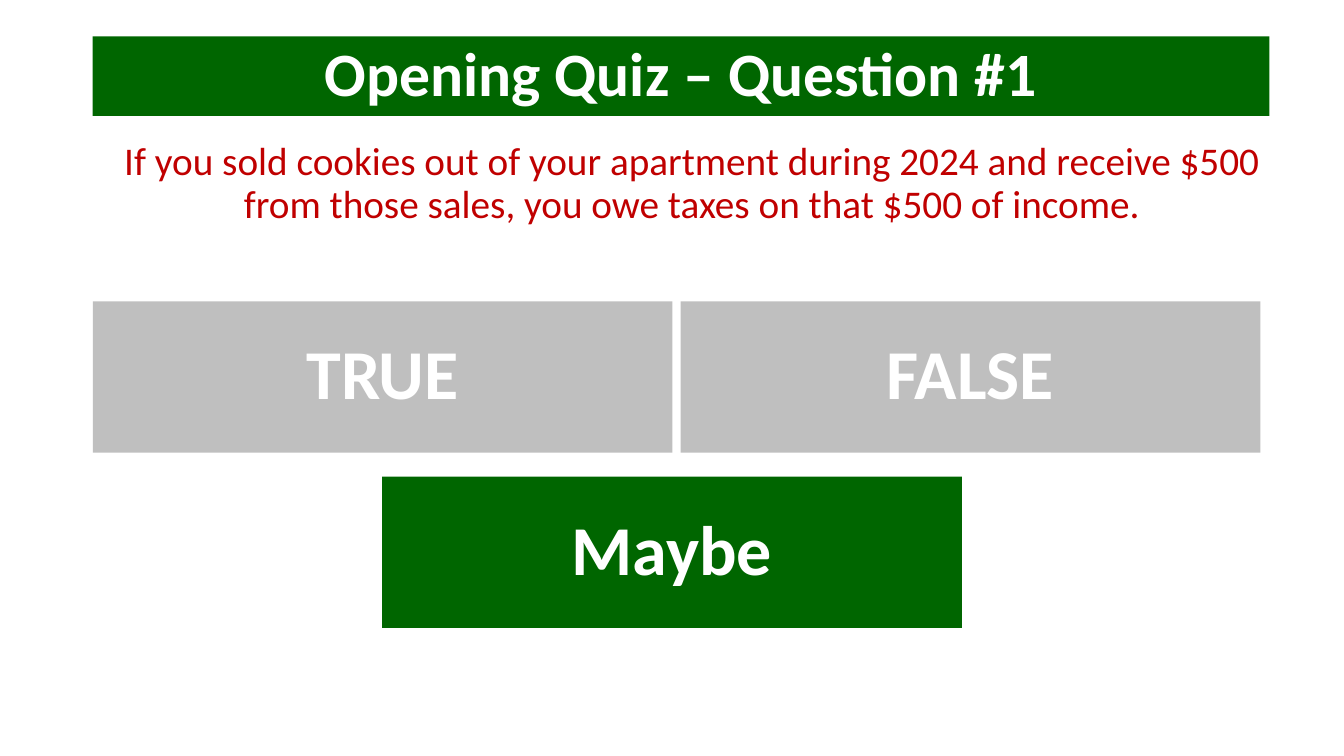
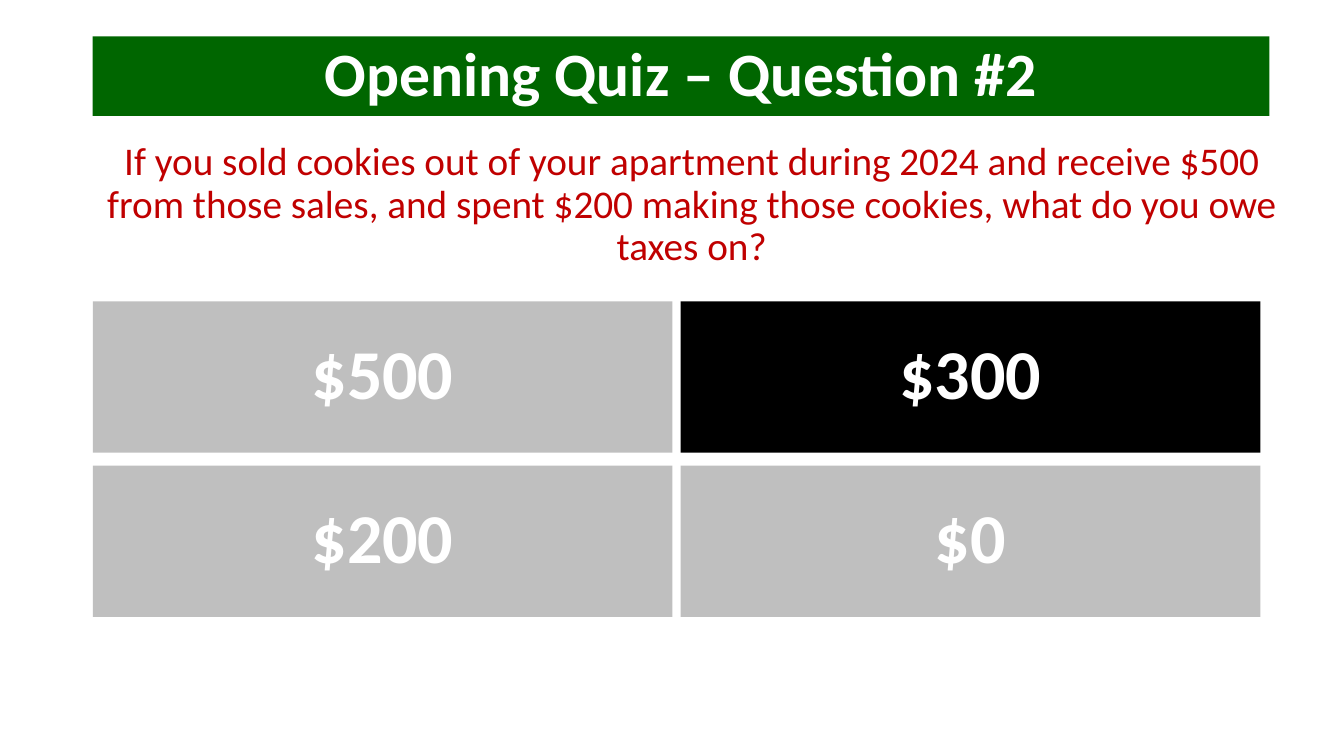
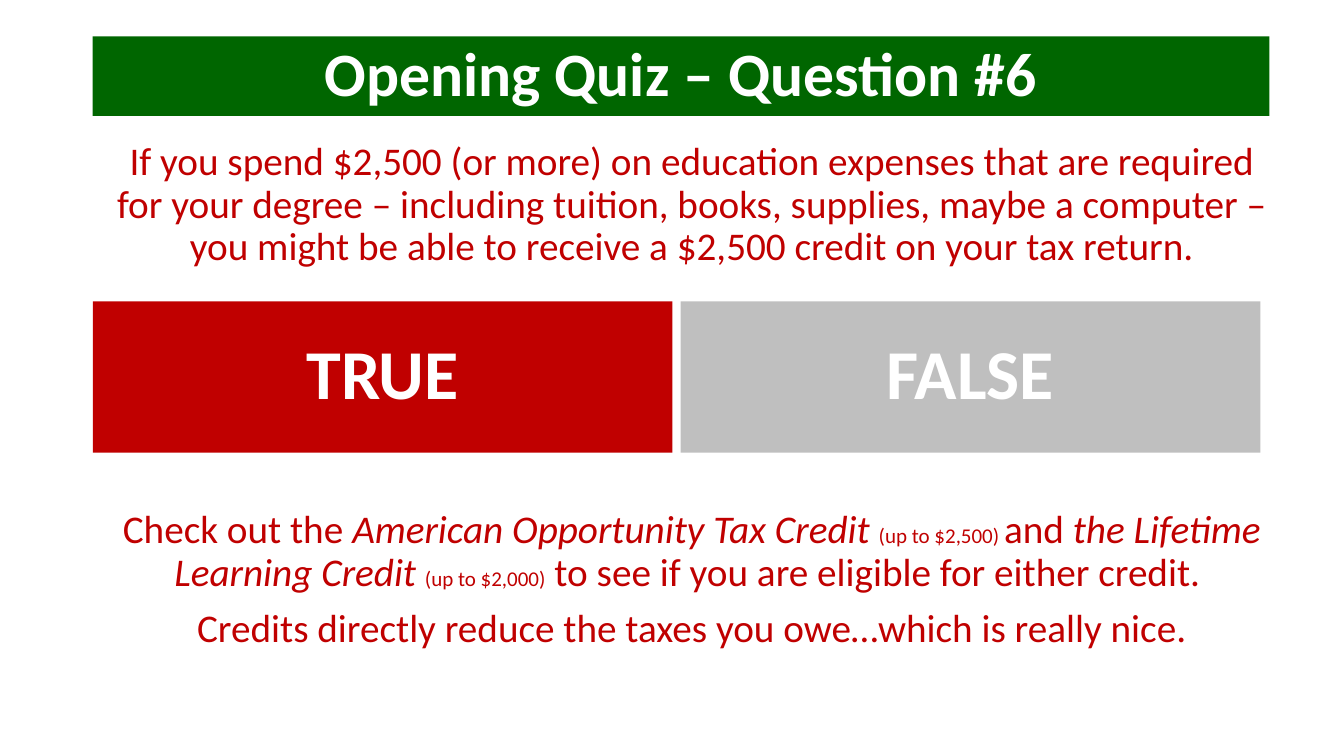
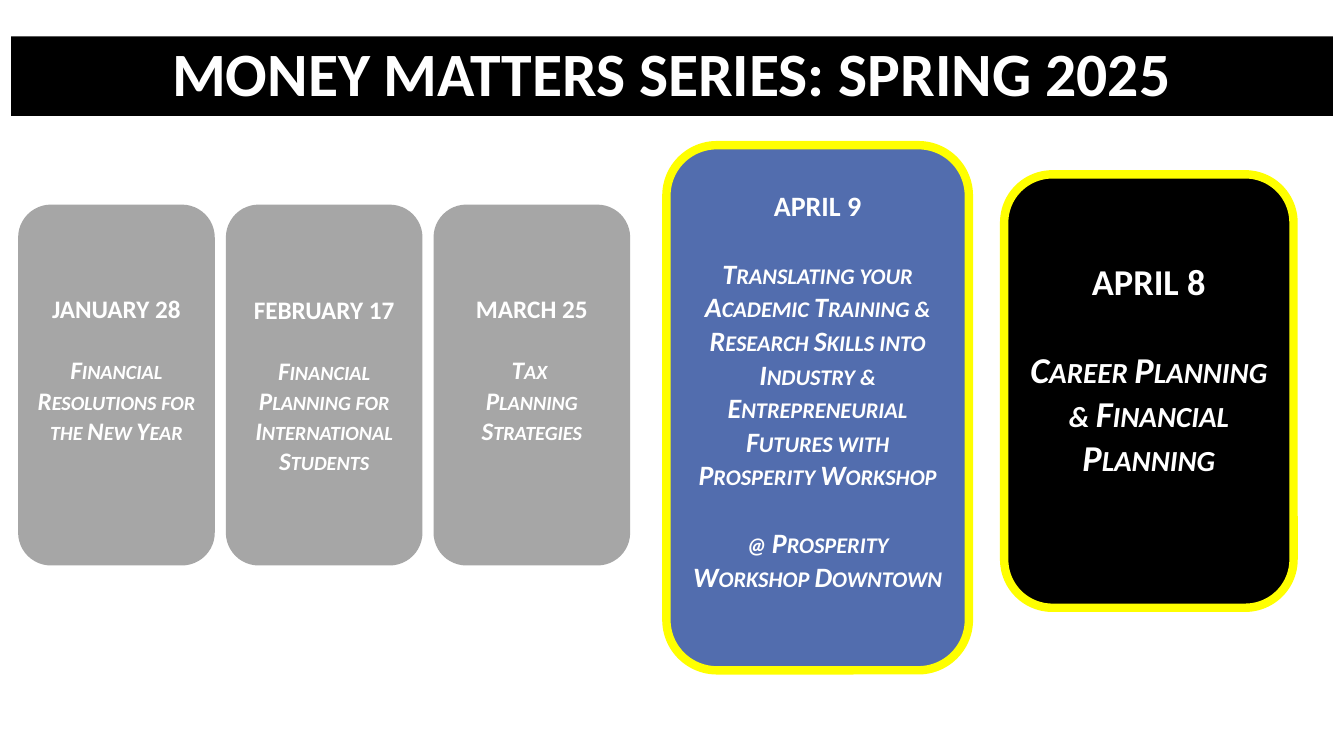
from pptx import Presentation
from pptx.dml.color import RGBColor
from pptx.enum.shapes import MSO_SHAPE
from pptx.enum.text import MSO_ANCHOR, PP_ALIGN
from pptx.util import Inches, Pt

COLORS = {
    "green": "006600",
    "red": "C00000",
    "black": "000000",
    "white": "FFFFFF",
    "muted": "BFBFBF",
    "past": "A6A6A6",
    "blue": "526DAE",
    "yellow": "FFFF00",
}
FONT = "Calibri"
LINE_HEIGHT = 1.22


def add_run(paragraph, text, size, color, bold=False, italic=False):
    run = paragraph.add_run()
    run.text = text
    run.font.name = FONT
    run.font.size = Pt(size)
    run.font.bold = bold
    run.font.italic = italic
    run.font.color.rgb = RGBColor.from_string(COLORS[color])
    return run


def add_panel(slide, preset, left, top, width, height, fill, label=None, size=None):
    panel = slide.shapes.add_shape(
        preset, Inches(left), Inches(top), Inches(width), Inches(height)
    )
    panel.shadow.inherit = False
    panel.fill.solid()
    panel.fill.fore_color.rgb = RGBColor.from_string(COLORS[fill])
    panel.line.fill.background()
    panel.text_frame.word_wrap = True
    panel.text_frame.vertical_anchor = MSO_ANCHOR.MIDDLE
    if label:
        paragraph = panel.text_frame.paragraphs[0]
        paragraph.alignment = PP_ALIGN.CENTER
        paragraph.line_spacing = 0.9
        add_run(paragraph, label, size, "white", bold=True)
    return panel


TITLE_TOP, TITLE_HEIGHT, TITLE_SIZE = 0.36, 0.79, 44
QUIZ_LEFT = 0.92
ANSWER_WIDTH, ANSWER_HEIGHT, ANSWER_SIZE = 5.75, 1.5, 50
COLUMNS = [QUIZ_LEFT, 6.75]
ROWS = [2.99, 4.62]
QUESTION_SIZE, NOTE_SIZE = 28, 15

quiz = [
    {
        "number": 1,
        "paragraphs": [
            (0, [("If you sold cookies out of your apartment during 2024 and receive $500 "
                  "from those sales, you owe taxes on that $500 of income.", QUESTION_SIZE, False)]),
        ],
        "answers": [
            ("TRUE", COLUMNS[0], ROWS[0], "muted"),
            ("FALSE", COLUMNS[1], ROWS[0], "muted"),
            ("Maybe", 3.79, 4.73, "green"),
        ],
    },
    {
        "number": 2,
        "paragraphs": [
            (0, [("If you sold cookies out of your apartment during 2024 and receive $500 "
                  "from those sales, and spent $200 making those cookies, what do you owe "
                  "taxes on?", QUESTION_SIZE, False)]),
        ],
        "answers": [
            ("$500", COLUMNS[0], ROWS[0], "muted"),
            ("$300", COLUMNS[1], ROWS[0], "black"),
            ("$200", COLUMNS[0], ROWS[1], "muted"),
            ("$0", COLUMNS[1], ROWS[1], "muted"),
        ],
    },
    {
        "number": 6,
        "paragraphs": [
            (0, [("If you spend $2,500 (or more) on education expenses that are required "
                  "for your degree – including tuition, books, supplies, maybe a computer – "
                  "you might be able to receive a $2,500 credit on your tax return.",
                  QUESTION_SIZE, False)]),
            (172, [
                ("Check out the ", QUESTION_SIZE, False),
                ("American Opportunity Tax Credit ", QUESTION_SIZE, True),
                ("(up to $2,500) ", NOTE_SIZE, False),
                ("and", QUESTION_SIZE, False),
                (" the Lifetime Learning Credit ", QUESTION_SIZE, True),
                ("(up to $2,000)", NOTE_SIZE, False),
                (" to see if you are eligible for either credit. ", QUESTION_SIZE, False),
            ]),
            (10, [("Credits directly reduce the taxes you owe…which is really nice.",
                   QUESTION_SIZE, False)]),
        ],
        "answers": [
            ("TRUE", COLUMNS[0], ROWS[0], "red"),
            ("FALSE", COLUMNS[1], ROWS[0], "muted"),
        ],
    },
]

presentation = Presentation()
presentation.slide_width = Inches(13.33)
presentation.slide_height = Inches(7.5)
blank_layout = presentation.slide_layouts[6]

for question in quiz:
    slide = presentation.slides.add_slide(blank_layout)
    add_panel(slide, MSO_SHAPE.RECTANGLE, QUIZ_LEFT, TITLE_TOP, 11.67, TITLE_HEIGHT,
              "green", f"Opening Quiz – Question #{question['number']}", TITLE_SIZE)

    question_box = slide.shapes.add_textbox(
        Inches(QUIZ_LEFT), Inches(1.36), Inches(11.88), Inches(5.4)
    )
    question_text = question_box.text_frame
    question_text.word_wrap = True
    for index, (space_before, runs) in enumerate(question["paragraphs"]):
        paragraph = question_text.add_paragraph() if index else question_text.paragraphs[0]
        paragraph.alignment = PP_ALIGN.CENTER
        paragraph.line_spacing = 0.9
        if index:
            paragraph.space_before = Pt(space_before)
        for text, size, italic in runs:
            add_run(paragraph, text, size, "red", italic=italic)

    for answer, left, top, fill in question["answers"]:
        add_panel(slide, MSO_SHAPE.RECTANGLE, left, top, ANSWER_WIDTH, ANSWER_HEIGHT,
                  fill, answer, ANSWER_SIZE)

past_boxes = [(0.18 + 2.06 * column, 2.03, 1.95, 3.58) for column in range(3)]
sessions = [
    (past_boxes[0], "past", False, 18, 1,
     ["JANUARY 28", "Financial Resolutions for the New Year"]),
    (past_boxes[1], "past", False, 18, 0,
     ["FEBRUARY 17", "Financial Planning for International Students"]),
    (past_boxes[2], "past", False, 18, 1,
     ["MARCH 25", "Tax \nPlanning Strategies"]),
    ((9.96, 1.73, 2.87, 4.3), "black", True, 26, 1,
     ["APRIL 8", "Career Planning\n& Financial Planning"]),
    ((6.61, 1.44, 3, 5.21), "blue", True, 20, 1,
     ["APRIL 9",
      "Translating your Academic Training & Research Skills into Industry & "
      "Entrepreneurial Futures with Prosperity Workshop",
      "@ Prosperity Workshop Downtown"]),
]

slide = presentation.slides.add_slide(blank_layout)
add_panel(slide, MSO_SHAPE.RECTANGLE, 0.11, TITLE_TOP, 13.11, TITLE_HEIGHT,
          "black", "MONEY MATTERS SERIES: SPRING 2025", TITLE_SIZE)

for box, fill, upcoming, size, lines_below, parts in sessions:
    card = add_panel(slide, MSO_SHAPE.ROUNDED_RECTANGLE, *box, fill)
    if upcoming:
        card.line.color.rgb = RGBColor.from_string(COLORS["yellow"])
        card.line.width = Pt(6)
    card_text = card.text_frame
    card_text.margin_bottom = Inches(0.05) + Pt(size * LINE_HEIGHT * lines_below)
    for index, part in enumerate(parts):
        paragraph = card_text.add_paragraph() if index else card_text.paragraphs[0]
        paragraph.alignment = PP_ALIGN.CENTER
        if index:
            paragraph.space_before = Pt(size * LINE_HEIGHT)
        for line_index, line in enumerate(part.split("\n")):
            if line_index:
                paragraph.add_line_break()
            run = add_run(paragraph, line, size, "white", bold=True, italic=index > 0)
            if index:
                run.font._element.set("cap", "small")

presentation.save("out.pptx")
